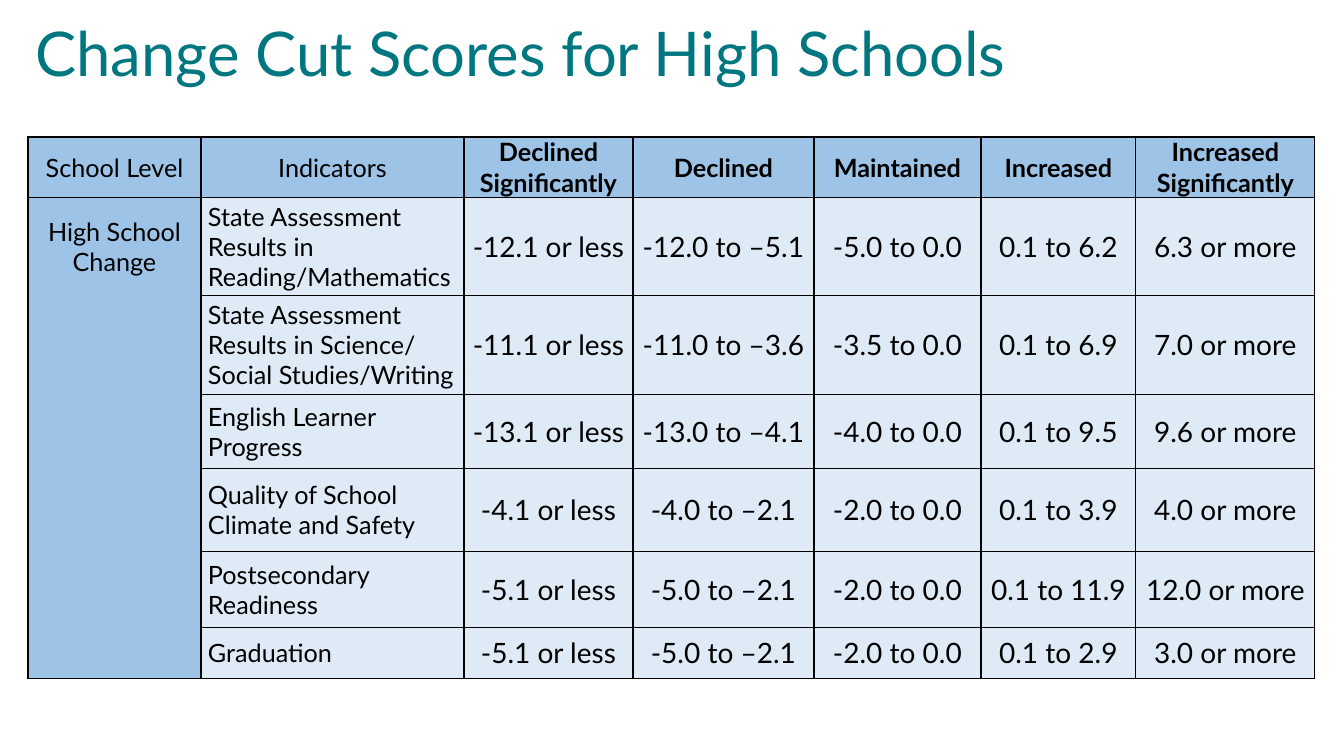
"""Build the slide with the change cut scores for high schools."""
import lxml.etree
import pptx
import pptx.dml.color
import pptx.enum.text
import pptx.oxml.ns
import pptx.util

PX = 914400 / 100.8
FONT = "Lato"
COLORS = {"title": "007780", "text": "000000", "border": "000000",
          "head": "9DC3E6", "body": "DEEBF7"}
ALIGN = pptx.enum.text.PP_ALIGN
MIDDLE = pptx.enum.text.MSO_ANCHOR.MIDDLE

COL_WIDTHS = [173, 263, 169, 181, 167, 155, 179]
ROW_HEIGHTS = [60, 98, 99, 74, 83, 76, 51]
HEADERS = ["School Level", "Indicators", "Declined Significantly", "Declined",
           "Maintained", "Increased", "Increased Significantly"]
LEVEL = ["High School", "Change"]
SCORES = [
    ["State Assessment Results in Reading/Mathematics",
     "-12.1 or less", "-12.0 to –5.1", "-5.0 to 0.0", "0.1 to 6.2", "6.3 or more"],
    ["State Assessment Results in Science/\nSocial Studies/Writing",
     "-11.1 or less", "-11.0 to –3.6", "-3.5 to 0.0", "0.1 to 6.9", "7.0 or more"],
    ["English Learner Progress",
     "-13.1 or less", "-13.0 to –4.1", "-4.0 to 0.0", "0.1 to 9.5", "9.6 or more"],
    ["Quality of School Climate and Safety",
     "-4.1 or less", "-4.0 to –2.1", "-2.0 to 0.0", "0.1 to 3.9", "4.0 or more"],
    ["Postsecondary Readiness",
     "-5.1 or less", "-5.0 to –2.1", "-2.0 to 0.0", "0.1 to 11.9", "12.0 or more"],
    ["Graduation",
     "-5.1 or less", "-5.0 to –2.1", "-2.0 to 0.0", "0.1 to 2.9", "3.0 or more"],
]


def px(n):
    """Turn whole pixels into EMU."""
    return pptx.util.Emu(round(n * PX))


def rgb(name):
    """Look up a named colour."""
    return pptx.dml.color.RGBColor.from_string(COLORS[name])


def add_text(p, text, size, color, bold=False):
    """Add formatted runs to a paragraph, one for each line of the text."""
    for i, line in enumerate(text.split("\n")):
        if i:
            p.add_line_break()
        r = p.add_run()
        r.text = line
        r.font.name = FONT
        r.font.size = pptx.util.Pt(size)
        r.font.bold = bold
        r.font.color.rgb = rgb(color)


def set_borders(cell, sides):
    """Draw the given sides of a cell and hide the others."""
    qn = pptx.oxml.ns.qn
    tc_pr = cell._tc.get_or_add_tcPr()
    for side in "LRTB":
        ln = lxml.etree.SubElement(tc_pr, qn(f"a:ln{side}"), w="12700")
        if side in sides:
            fill = lxml.etree.SubElement(ln, qn("a:solidFill"))
            lxml.etree.SubElement(fill, qn("a:srgbClr"), val=COLORS["border"])
        else:
            lxml.etree.SubElement(ln, qn("a:noFill"))


def fill_cell(cell, paragraphs, fill, size=18, bold=False, align=ALIGN.CENTER, sides="LRTB"):
    """Give a cell its borders, fill and text."""
    set_borders(cell, sides)
    cell.fill.solid()
    cell.fill.fore_color.rgb = rgb(fill)
    cell.vertical_anchor = MIDDLE
    cell.margin_left = cell.margin_right = px(7)
    cell.margin_top = cell.margin_bottom = 0
    tf = cell.text_frame
    for i, text in enumerate(paragraphs):
        p = tf.add_paragraph() if i else tf.paragraphs[0]
        p.alignment = align
        add_text(p, text, size, "text", bold)


def add_title(s, text):
    """Place and format the title placeholder."""
    sp = s.shapes.title
    sp.left, sp.top, sp.width, sp.height = px(0), px(0), px(1344), px(114)
    tf = sp.text_frame
    tf.auto_size = pptx.enum.text.MSO_AUTO_SIZE.NONE
    tf.vertical_anchor = MIDDLE
    p = tf.paragraphs[0]
    p.alignment = ALIGN.LEFT
    p.line_spacing = 0.9
    p._p.get_or_add_pPr().set("marL", str(px(25)))
    add_text(p, text, 44, "title")


def add_score_table(s):
    """Add the table of cut scores."""
    frame = s.shapes.add_table(len(ROW_HEIGHTS), len(COL_WIDTHS), px(28), px(137),
                               px(sum(COL_WIDTHS)), px(sum(ROW_HEIGHTS)))
    table = frame.table
    table.first_row = table.horz_banding = False
    for col, width in zip(table.columns, COL_WIDTHS):
        col.width = px(width)
    for row, height in zip(table.rows, ROW_HEIGHTS):
        row.height = px(height)
    for c, text in enumerate(HEADERS):
        fill_cell(table.cell(0, c), [text], "head", bold=c > 1)
    for r, (indicator, *ranges) in enumerate(SCORES, 1):
        sides = "LR" + "T" * (r == 1) + "B" * (r == len(SCORES))
        fill_cell(table.cell(r, 0), LEVEL if r == 1 else [], "head", sides=sides)
        fill_cell(table.cell(r, 1), [indicator], "body", align=ALIGN.LEFT)
        for c, text in enumerate(ranges, 2):
            fill_cell(table.cell(r, c), [text], "body", size=20)


def main():
    """Build and save the presentation."""
    prs = pptx.Presentation()
    prs.slide_width, prs.slide_height = px(1344), px(756)
    s = prs.slides.add_slide(prs.slide_layouts[5])
    add_title(s, "Change Cut Scores for High Schools")
    add_score_table(s)
    prs.save("out.pptx")


if __name__ == "__main__":
    main()
